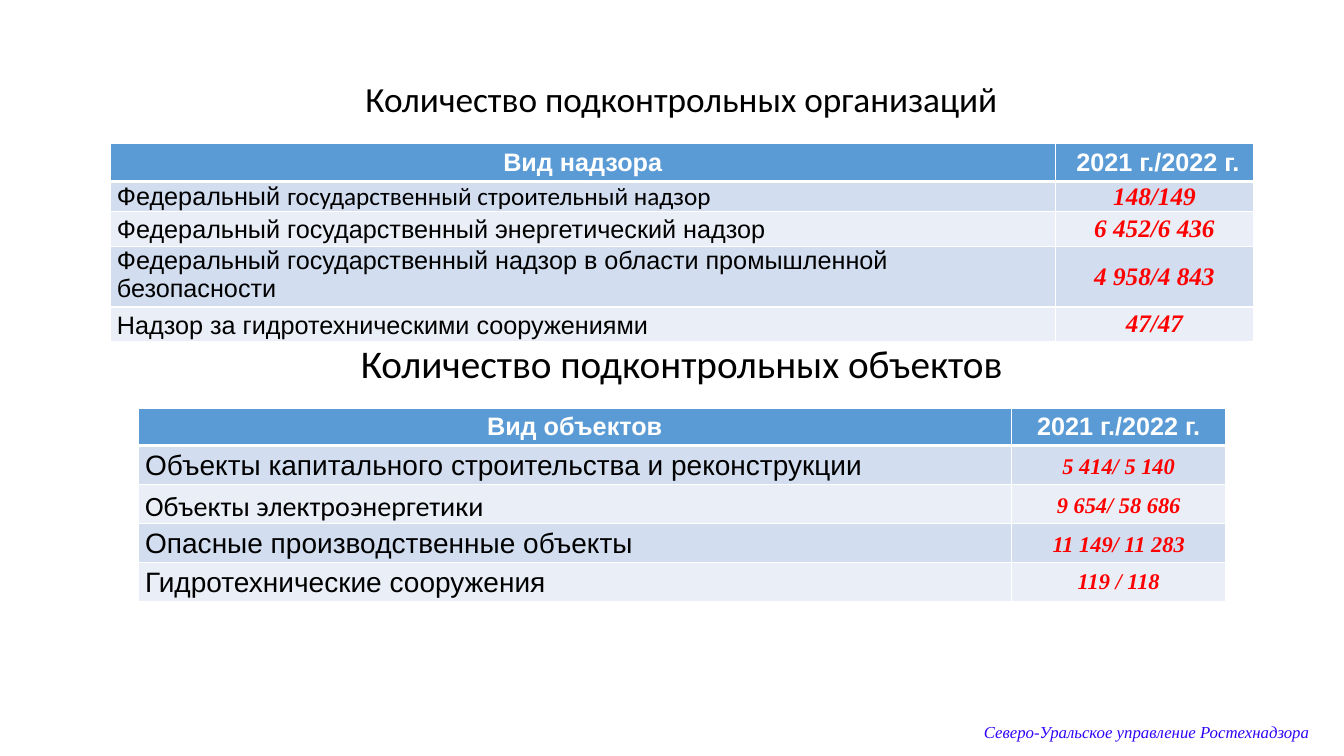
from dataclasses import dataclass

from lxml import etree
from pptx import Presentation
from pptx.dml.color import RGBColor
from pptx.enum.text import MSO_ANCHOR, PP_ALIGN
from pptx.oxml.ns import qn
from pptx.util import Inches, Pt

CENTER, LEFT = PP_ALIGN.CENTER, PP_ALIGN.LEFT
TOP, MIDDLE, BOTTOM = MSO_ANCHOR.TOP, MSO_ANCHOR.MIDDLE, MSO_ANCHOR.BOTTOM


@dataclass(frozen=True)
class Theme:
    """Colours, fonts and type sizes of the slide."""
    text: str = "000000"
    white: str = "FFFFFF"
    header: str = "5B9BD5"
    bands: tuple = ("D2DEEF", "EAEFF7")
    value: str = "FF0000"
    footer: str = "3103F7"
    sans: str = "Arial"
    heading: str = "Calibri"
    serif: str = "Times New Roman"
    first_heading_size: float = 25.2
    second_heading_size: float = 28
    table_size: float = 18
    object_size: float = 20
    object_value_size: float = 16
    footer_size: float = 12


THEME = Theme()

ORGANIZATIONS = [
    ("Вид надзора", " 2021 г./2022 г."),
    ("Федеральный |государственный строительный надзор", "148/149"),
    ("Федеральный государственный энергетический надзор", "6 452/6 436"),
    ("Федеральный государственный надзор в области промышленной безопасности",
     "4 958/4 843"),
    ("Надзор за гидротехническими сооружениями", "47/47"),
]
OBJECTS = [
    ("Вид объектов", "2021 г./2022 г."),
    ("Объекты капитального строительства и реконструкции", "5 414/ 5 140"),
    ("|Объекты электроэнергетики", "9 654/ 58 686"),
    ("Опасные производственные объекты", "11 149/ 11 283"),
    ("Гидротехнические сооружения", "119 / 118"),
]


def style_font(font, name, size, color, bold=False, italic=False):
    """Set every property of a font."""
    font.name, font.size = name, Pt(size)
    font.bold, font.italic = bold, italic
    font.color.rgb = RGBColor.from_string(color)


def add_label(page, box, text, font, align=CENTER, anchor=MIDDLE, spacing=1.0,
              bottom=0.05):
    """Place one line of text in a box."""
    frame = page.shapes.add_textbox(*map(Inches, box)).text_frame
    frame.word_wrap = True
    frame.vertical_anchor = anchor
    frame.margin_bottom = Inches(bottom)
    para = frame.paragraphs[0]
    para.text, para.alignment, para.line_spacing = text, align, spacing
    style_font(para.font, *font)


def add_borders(cell, top, bottom):
    """Draw white lines around a cell."""
    properties = cell._tc.get_or_add_tcPr()
    for side, width in (("L", 1), ("R", 1), ("T", top), ("B", bottom)):
        line = etree.SubElement(properties, qn(f"a:ln{side}"), w=str(Pt(width)))
        fill = etree.SubElement(line, qn("a:solidFill"))
        etree.SubElement(fill, qn("a:srgbClr"), val=THEME.white)


def fill_cell(cell, text, font, color, align, anchor, spacing):
    """Fill a cell; text after a bar takes the heading font."""
    cell.fill.solid()
    cell.fill.fore_color.rgb = RGBColor.from_string(color)
    cell.margin_left = cell.margin_right = Inches(0.07)
    cell.margin_top = cell.margin_bottom = 0
    cell.vertical_anchor = anchor
    para = cell.text_frame.paragraphs[0]
    para.alignment, para.line_spacing = align, spacing
    style_font(para.font, *font)
    plain, _, accent = text.partition("|")
    for part, name in ((plain, font[0]), (accent, THEME.heading)):
        if part:
            span = para.add_run()
            span.text = part
            style_font(span.font, name, *font[1:])


def add_count_table(page, left, top, widths, heights, rows, sizes, spacings):
    """Place a banded table of names and counts."""
    name_size, value_size = sizes
    table = page.shapes.add_table(
        len(rows), len(widths), Inches(left), Inches(top),
        Inches(sum(widths)), Inches(sum(heights))).table
    for column, width in zip(table.columns, widths):
        column.width = Inches(width)
    for row, height in zip(table.rows, heights):
        row.height = Inches(height)
    header_font = (THEME.sans, THEME.table_size, THEME.white, True)
    name_font = (THEME.sans, name_size, THEME.text)
    value_font = (THEME.serif, value_size, THEME.value, True, True)
    for index, texts in enumerate(rows):
        for column, text in enumerate(texts):
            cell = table.cell(index, column)
            add_borders(cell, 3 if index == 1 else 1, 3 if index == 0 else 1)
            if index == 0:
                fill_cell(cell, text, header_font, THEME.header, CENTER, MIDDLE, 1.0)
                continue
            band = THEME.bands[(index - 1) % 2]
            spacing = spacings[index - 1][column]
            if column == 0:
                fill_cell(cell, text, name_font, band, LEFT, TOP, spacing)
            else:
                fill_cell(cell, text, value_font, band, CENTER, MIDDLE, spacing)


def add_organizations(page, left, top):
    """Place the heading and table of supervised organizations."""
    add_label(page, (left + 1.15, top, 9.04, 0.47),
              "Количество подконтрольных организаций",
              (THEME.heading, THEME.first_heading_size, THEME.text), spacing=0.9)
    add_count_table(page, left, top + 0.65, (9.38, 1.96),
                    (0.38, 0.3, 0.33, 0.56, 0.34), ORGANIZATIONS,
                    (THEME.table_size, THEME.table_size),
                    ((1.0, 1.0), (1.15, 1.0), (1.0, 1.0), (1.15, 1.0)))


def add_objects(page, left, top):
    """Place the heading and table of supervised objects."""
    add_label(page, (left + 0.87, top, 9.04, 0.47),
              "Количество подконтрольных объектов",
              (THEME.heading, THEME.second_heading_size, THEME.text),
              anchor=BOTTOM, bottom=0.1)
    add_count_table(page, left, top + 0.59, (8.66, 2.13),
                    (0.37, 0.36, 0.39, 0.39, 0.36), OBJECTS,
                    (THEME.object_size, THEME.object_value_size),
                    ((1.15, 1.15), (1.15, 1.15), (1.15, 1.15), (1.15, 1.0)))


def main():
    """Build and save the deck."""
    deck = Presentation()
    deck.slide_width, deck.slide_height = Inches(13.33), Inches(7.5)
    page = deck.slides.add_slide(deck.slide_layouts[6])
    add_organizations(page, 1.09, 0.77)
    add_objects(page, 1.37, 3.46)
    add_label(page, (9.66, 7.01, 3.52, 0.49),
              "Северо-Уральское управление Ростехнадзора",
              (THEME.serif, THEME.footer_size, THEME.footer, False, True), LEFT)
    deck.save("out.pptx")


if __name__ == "__main__":
    main()
